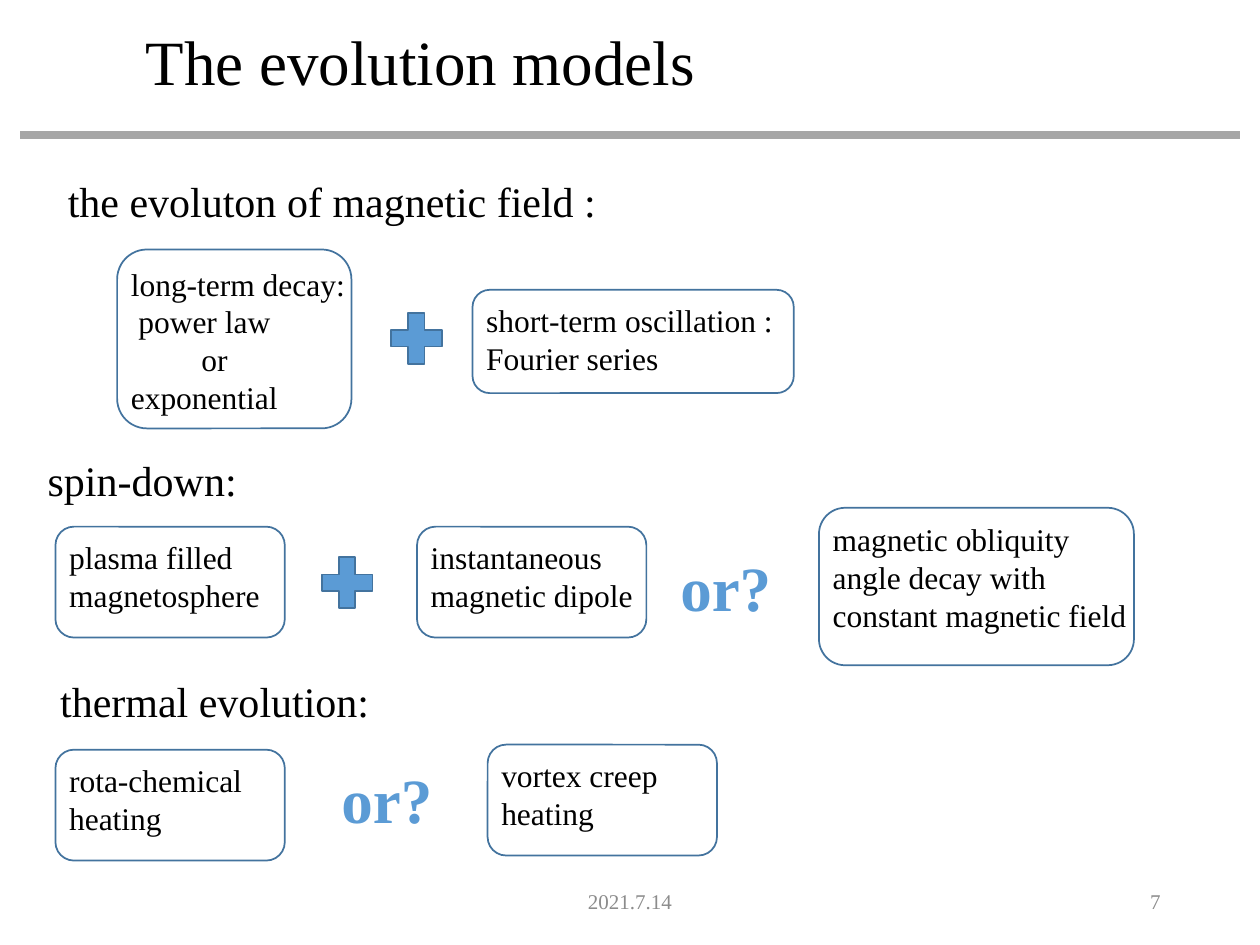
from lxml import etree
from pptx import Presentation
from pptx import util as u
from pptx.dml.color import RGBColor
from pptx.enum import shapes, text
from pptx.oxml.ns import qn

COLORS = {"ink": "000000", "muted": "8C8C8C", "rule": "A6A6A6",
          "accent": "5B9BD5", "outline": "43739E"}


class Deck:
    """Slide style with one method for each kind of element."""

    font = "Times New Roman"

    def __init__(self, prs):
        self.s = prs.slides.add_slide(prs.slide_layouts[6])

    def color(self, name):
        return RGBColor.from_string(COLORS[name])

    def box(self, left, top, width, height):
        return [u.Inches(v) for v in (left, top, width, height)]

    def rule(self, x1, x2, y):
        sp = self.s.shapes.add_connector(
            shapes.MSO_CONNECTOR.STRAIGHT, *self.box(x1, y, x2, y))
        sp.line.color.rgb = self.color("rule")
        sp.line.width = u.Pt(4.75)
        etree.SubElement(sp._element.spPr, qn("a:effectLst"))

    def text(self, lines, at, size=24, color="ink", bold=False, align="LEFT",
             anchor="TOP", wrap=True, grow=True, spacing=None, parent=None):
        sp = (parent or self.s).shapes.add_textbox(*self.box(*at))
        tf = sp.text_frame
        tf.word_wrap = wrap
        tf.vertical_anchor = text.MSO_ANCHOR[anchor]
        tf.auto_size = (text.MSO_AUTO_SIZE.SHAPE_TO_FIT_TEXT if grow
                        else text.MSO_AUTO_SIZE.NONE)
        tf.text = lines
        for p in tf.paragraphs:
            p.alignment = text.PP_ALIGN[align]
            if spacing:
                p.line_spacing = spacing
            for r in p.runs:
                r.font.name = self.font
                r.font.size = u.Pt(size)
                r.font.bold = bold
                r.font.color.rgb = self.color(color)
        return tf

    def shape(self, kind, at, fill=None, parent=None):
        sp = (parent or self.s).shapes.add_shape(kind, *self.box(*at))
        sp.shadow.inherit = False
        if fill:
            sp.fill.solid()
            sp.fill.fore_color.rgb = self.color(fill)
        else:
            sp.fill.background()
        sp.line.color.rgb = self.color("outline")
        sp.line.width = u.Pt(1)

    def card(self, lines, left, top, width=1.82, height=0.88, rows=2, drop=0.04):
        group = self.s.shapes.add_group_shape()
        self.shape(shapes.MSO_SHAPE.ROUNDED_RECTANGLE,
                   (left, top, width, height), parent=group)
        at = left + 0.01, top + drop, width * 1.055, 0.11 + 0.3 * rows
        return self.text(lines, at, size=18, parent=group)

    def plus(self, left, top):
        self.shape(shapes.MSO_SHAPE.MATH_PLUS, (left, top, 0.55, 0.55), "accent")

    def choice(self, left, top):
        self.text("or?", (left, top, 0.92, 0.71), size=36, color="accent",
                  bold=True, align="CENTER", wrap=False)

    def footer(self, words, left, width, align):
        self.text(words, (left, 6.95, width, 0.4), size=12, color="muted",
                  align=align, anchor="MIDDLE", grow=False)


def main():
    prs = Presentation()
    prs.slide_width, prs.slide_height = u.Inches(10), u.Inches(7.5)
    deck = Deck(prs)

    deck.rule(0.16, 9.84, 1.07)
    deck.text("The evolution models", (1.06, 0.2, 7.94, 0.75), size=36,
              grow=False, spacing=0.9)
    deck.footer("2021.7.14", 3.31, 3.38, "CENTER")
    deck.footer("7", 7.06, 2.25, "RIGHT")

    deck.text("the evoluton of magnetic field :", (0.44, 1.34, 4.74, 0.5))
    tf = deck.card("long-term decay:\npower law\nor exponential",
                   0.93, 1.98, 1.86, 1.42, rows=4, drop=0.07)
    for p, indent in zip(tf.paragraphs[1:], (0.06, 0.56)):
        p._p.get_or_add_pPr().set("indent", str(u.Inches(indent)))
    deck.plus(3.03, 2.41)
    deck.card("short-term oscillation :\nFourier series", 3.75, 2.3, 2.55, 0.82)

    deck.text("spin-down:", (0.28, 3.56, 3.6, 0.5))
    deck.card("plasma filled magnetosphere", 0.44, 4.18)
    deck.plus(2.48, 4.35)
    deck.card("instantaneous magnetic dipole", 3.31, 4.18)
    deck.choice(5.3, 4.3)
    deck.card("magnetic obliquity angle decay with constant magnetic field",
              6.5, 4.03, 2.5, 1.25, rows=3, drop=0.05)

    deck.text("thermal evolution:", (0.38, 5.31, 4.06, 0.5))
    deck.card("rota-chemical heating", 0.44, 5.95)
    deck.choice(2.61, 5.99)
    deck.card("vortex creep heating", 3.87, 5.91)

    prs.save("out.pptx")


if __name__ == "__main__":
    main()
